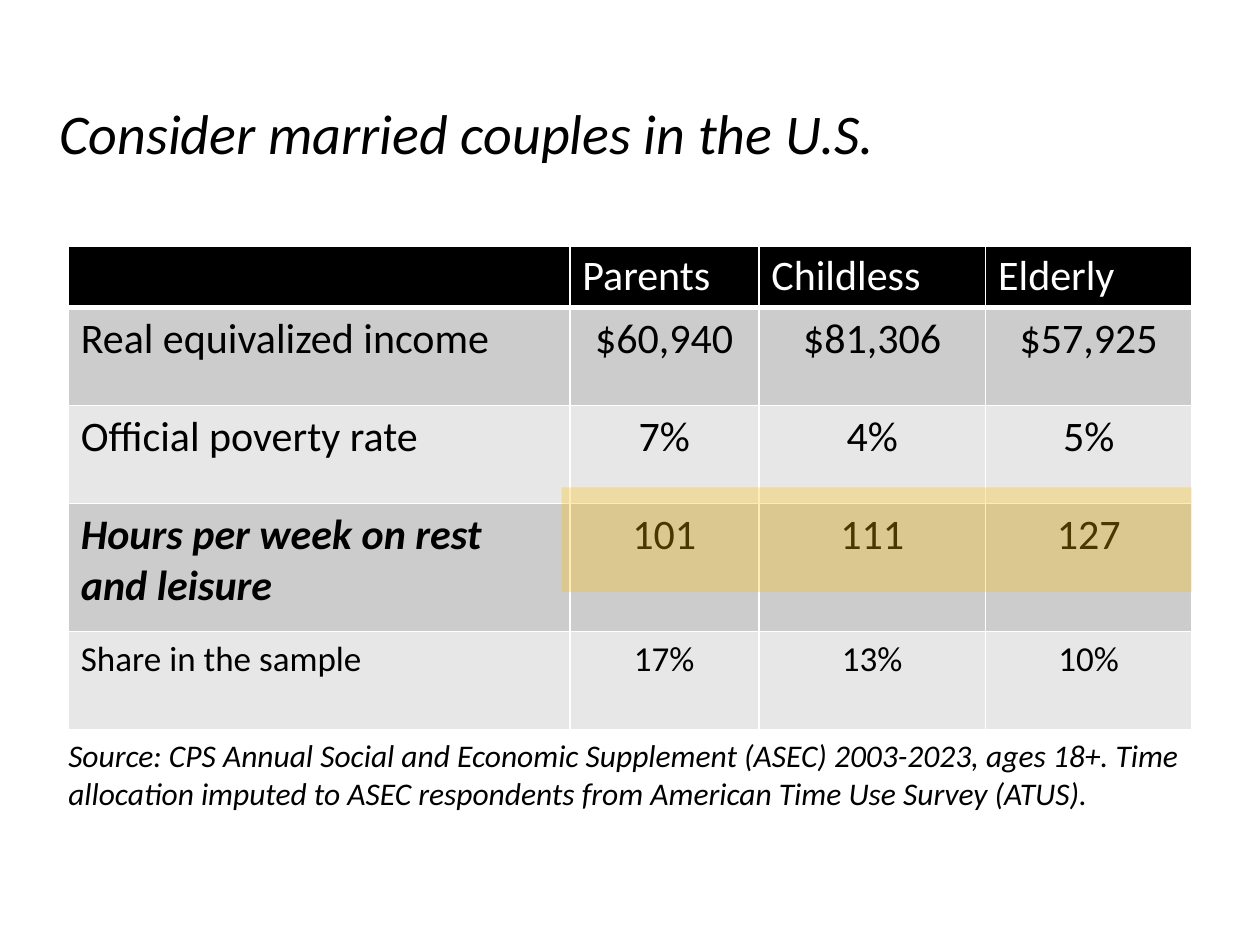
from pptx import Presentation
from pptx.dml.color import RGBColor
from pptx.enum.shapes import MSO_SHAPE
from pptx.enum.text import MSO_ANCHOR, MSO_AUTO_SIZE, PP_ALIGN
from pptx.oxml.ns import qn
from pptx.util import Pt
from lxml.etree import SubElement

BLACK = RGBColor(0x00, 0x00, 0x00)
WHITE = RGBColor(0xFF, 0xFF, 0xFF)
DARK_BAND = RGBColor(0xCC, 0xCC, 0xCC)
LIGHT_BAND = RGBColor(0xE7, 0xE7, 0xE7)
HIGHLIGHT = RGBColor(0xFF, 0xC0, 0x00)

FONT = "Calibri"
COLUMN_WIDTHS = [286.6, 108, 129.6, 118]
ROW_HEIGHTS = [34.9, 56, 56, 73.2, 56]
ROWS = [
    ["", "Parents", "Childless", "Elderly"],
    ["Real equivalized income", "$60,940", "$81,306", "$57,925"],
    ["Official poverty rate", "7%", "4%", "5%"],
    ["Hours per week on rest and leisure", "101", "111", "127"],
    ["Share in the sample", "17%", "13%", "10%"],
]
LEISURE_ROW = 3
SHARE_ROW = 4


def place(shape, left, top, width, height):
    shape.left, shape.top = Pt(left), Pt(top)
    shape.width, shape.height = Pt(width), Pt(height)


def format_font(font, size, color=BLACK, bold=False, italic=False):
    font.name = FONT
    font.size = Pt(size)
    font.color.rgb = color
    font.bold = bold
    font.italic = italic


def write_italic(shape, text, size):
    frame = shape.text_frame
    frame.text = text
    frame.word_wrap = True
    frame.auto_size = MSO_AUTO_SIZE.NONE
    frame.vertical_anchor = MSO_ANCHOR.TOP
    frame.margin_left = frame.margin_right = 0
    frame.margin_top = frame.margin_bottom = 0
    paragraph = frame.paragraphs[0]
    paragraph.alignment = PP_ALIGN.LEFT
    format_font(paragraph.runs[0].font, size, italic=True)


def add_title(slide, left, top, width, height):
    title = slide.shapes.title
    place(title, left, top, width, height)
    write_italic(title, "Consider married couples in the U.S.", 32)


def add_source_note(slide, left, top, width, height):
    note = slide.shapes.add_textbox(Pt(left), Pt(top), Pt(width), Pt(height))
    write_italic(
        note,
        "Source: CPS Annual Social and Economic Supplement (ASEC) 2003-2023, ages 18+. "
        "Time allocation imputed to ASEC respondents from American Time Use Survey (ATUS).",
        18,
    )


def set_borders(cell, widths):
    properties = cell._tc.get_or_add_tcPr()
    for side, width in widths.items():
        line = SubElement(properties, qn(f"a:ln{side}"), w=str(Pt(width)))
        fill = SubElement(line, qn("a:solidFill"))
        SubElement(fill, qn("a:srgbClr"), val=str(WHITE))


def format_cell(cell, row, column):
    header = row == 0
    set_borders(cell, {
        "L": 1, "R": 1,
        "T": 3 if row == 1 else 1,
        "B": 3 if header else 1,
    })
    cell.fill.solid()
    cell.fill.fore_color.rgb = BLACK if header else DARK_BAND if row % 2 else LIGHT_BAND
    cell.margin_top = cell.margin_bottom = Pt(2.6 if header else 3.6)
    paragraph = cell.text_frame.paragraphs[0]
    if column and not header:
        paragraph.alignment = PP_ALIGN.CENTER
    emphasized = row == LEISURE_ROW and column == 0
    for run in paragraph.runs:
        format_font(
            run.font,
            20 if row == SHARE_ROW else 24,
            WHITE if header else BLACK,
            emphasized,
            emphasized,
        )


def add_couples_table(slide, left, top, width, height):
    table = slide.shapes.add_table(
        len(ROWS), len(COLUMN_WIDTHS), Pt(left), Pt(top), Pt(width), Pt(height)
    ).table
    for column, column_width in zip(table.columns, COLUMN_WIDTHS):
        column.width = Pt(column_width)
    for row, row_height in zip(table.rows, ROW_HEIGHTS):
        row.height = Pt(row_height)
    for row, values in enumerate(ROWS):
        for column, value in enumerate(values):
            cell = table.cell(row, column)
            cell.text = value
            format_cell(cell, row, column)


def add_highlight(slide, left, top, width, height):
    highlight = slide.shapes.add_shape(
        MSO_SHAPE.RECTANGLE, Pt(left), Pt(top), Pt(width), Pt(height)
    )
    highlight.shadow.inherit = False
    highlight.line.fill.background()
    highlight.fill.solid()
    highlight.fill.fore_color.rgb = HIGHLIGHT
    color = highlight.fill._xPr.find(f".//{qn('a:srgbClr')}")
    SubElement(color, qn("a:alpha"), val="29000")


def main():
    presentation = Presentation()
    presentation.slide_width = Pt(720)
    presentation.slide_height = Pt(540)
    slide = presentation.slides.add_slide(presentation.slide_layouts[5])
    left, width = 39, sum(COLUMN_WIDTHS)
    add_title(slide, 34, 56.5, width, 40)
    add_couples_table(slide, left, 140.8, width, sum(ROW_HEIGHTS))
    add_source_note(slide, left, 420.5, width, 50)
    add_highlight(slide, 321, 278.6, 360, 59.8)
    presentation.save("out.pptx")


if __name__ == "__main__":
    main()
